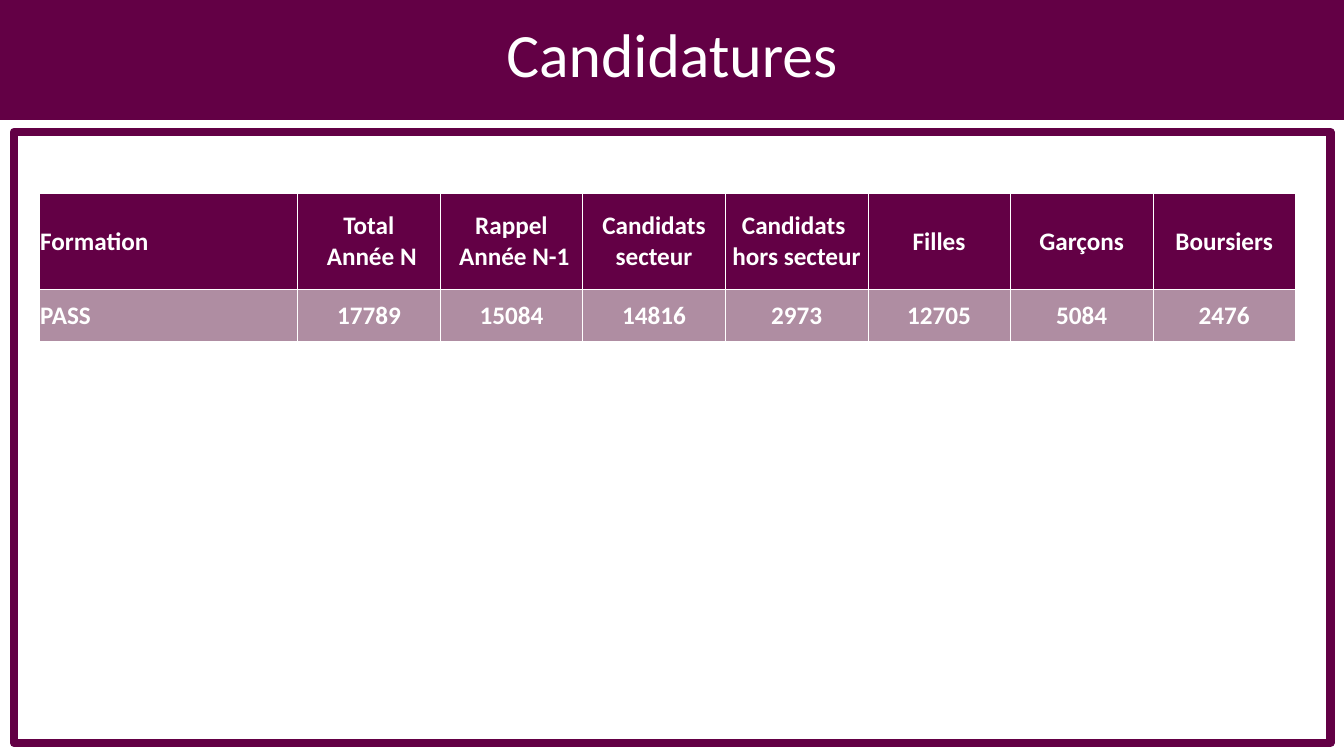
from lxml.etree import SubElement
from pptx import Presentation
from pptx.dml.color import RGBColor
from pptx.enum.shapes import MSO_SHAPE
from pptx.enum.text import MSO_ANCHOR, PP_ALIGN
from pptx.oxml.ns import qn
from pptx.util import Pt

PLUM, MAUVE, WHITE = "630045", "AF8DA2", "FFFFFF"
FORMATION_WIDTH = 184.6
ROW_HEIGHTS = [68.6, 37.4]
ROW_FILLS = [PLUM, MAUVE]
CANDIDATURES = [
    ["Formation", "Total\n Année N", "Rappel\n Année N-1", "Candidats\nsecteur",
     "Candidats \nhors secteur", "Filles", "Garçons", "Boursiers"],
    ["PASS", "17789", "15084", "14816", "2973", "12705", "5084", "2476"],
]


def color(value):
    return RGBColor.from_string(value)


def set_all(target, **values):
    for name, value in values.items():
        setattr(target, name, value)


def write(paragraph, text, align, size, bold):
    paragraph.text = text
    paragraph.alignment = align
    for run in paragraph.runs:
        set_all(run.font, name="Calibri", size=Pt(size), bold=bold)
        run.font.color.rgb = color(WHITE)


def add_rectangle(slide, box):
    rectangle = slide.shapes.add_shape(MSO_SHAPE.RECTANGLE, *map(Pt, box))
    rectangle.shadow.inherit = False
    return rectangle


def add_title_band(slide, box, title):
    band = add_rectangle(slide, box)
    band.fill.solid()
    band.fill.fore_color.rgb = color(PLUM)
    band.line.fill.background()
    set_all(band.text_frame, word_wrap=True, vertical_anchor=MSO_ANCHOR.MIDDLE,
            margin_top=Pt(3.6), margin_bottom=Pt(6.5))
    heading = band.text_frame.paragraphs[0]
    write(heading, title, PP_ALIGN.CENTER, 44, False)
    heading.line_spacing = 0.9


def add_frame(slide, box):
    frame = add_rectangle(slide, box)
    frame.fill.background()
    frame.line.color.rgb = color(PLUM)
    frame.line.width = Pt(6)


def add_borders(cell, sides):
    """Draw thin white lines on the named sides; call before filling the cell."""
    properties = cell._tc.get_or_add_tcPr()
    for side in sides:
        border = SubElement(properties, qn(f"a:ln{side}"), w=str(Pt(0.5)))
        fill = SubElement(border, qn("a:solidFill"))
        SubElement(fill, qn("a:srgbClr"), val=WHITE)


def add_candidature_table(slide, box, rows):
    left, top, width, height = box
    column_count = len(rows[0])
    table = slide.shapes.add_table(len(rows), column_count, *map(Pt, box)).table
    set_all(table, first_row=False, horz_banding=False)
    count_width = (width - FORMATION_WIDTH) / (column_count - 1)
    for index, column in enumerate(table.columns):
        column.width = Pt(count_width if index else FORMATION_WIDTH)
    for row_index, values in enumerate(rows):
        table.rows[row_index].height = Pt(ROW_HEIGHTS[row_index])
        for index, value in enumerate(values):
            cell = table.cell(row_index, index)
            set_all(cell, vertical_anchor=MSO_ANCHOR.MIDDLE, margin_left=Pt(0.7),
                    margin_right=Pt(0.7), margin_top=Pt(0.7), margin_bottom=0)
            drawn = {"L": index > 0, "R": index < column_count - 1,
                     "T": row_index > 0, "B": True}
            add_borders(cell, [side for side, shown in drawn.items() if shown])
            cell.fill.solid()
            cell.fill.fore_color.rgb = color(ROW_FILLS[row_index])
            align = PP_ALIGN.CENTER if index else PP_ALIGN.LEFT
            write(cell.text_frame.paragraphs[0], value, align, 18, True)


def main():
    presentation = Presentation()
    set_all(presentation, slide_width=Pt(960), slide_height=Pt(540))
    slide = presentation.slides.add_slide(presentation.slide_layouts[6])
    add_title_band(slide, (0, 0, 960, 85.7), "Candidatures")
    add_frame(slide, (10, 94.3, 940.3, 436.3))
    add_candidature_table(slide, (28, 138, 897.4, sum(ROW_HEIGHTS)), CANDIDATURES)
    presentation.save("out.pptx")


if __name__ == "__main__":
    main()
